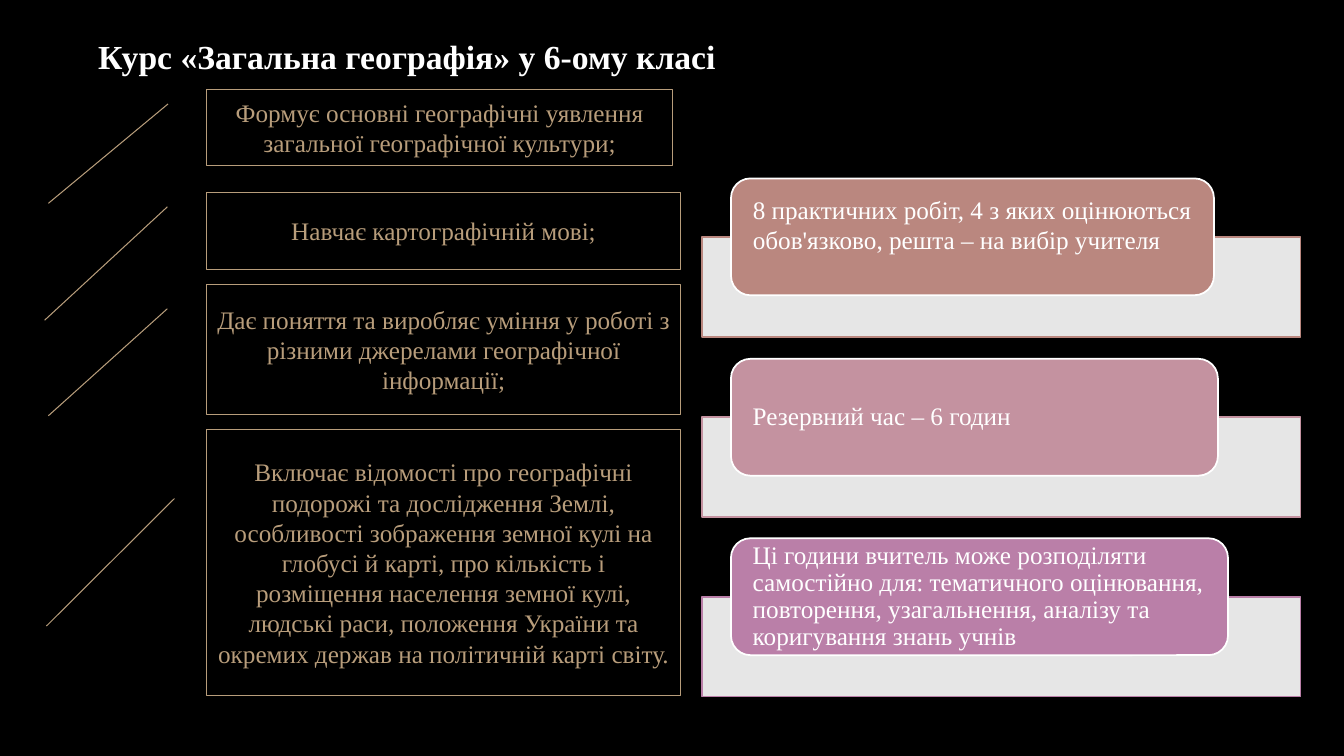
from lxml import etree
from pptx import Presentation
from pptx.dml.color import RGBColor
from pptx.enum.shapes import MSO_SHAPE
from pptx.enum.text import MSO_ANCHOR, PP_ALIGN
from pptx.oxml.ns import qn
from pptx.util import Inches, Pt

RECT = MSO_SHAPE.RECTANGLE
ROUNDED = MSO_SHAPE.ROUNDED_RECTANGLE
CALLOUT = MSO_SHAPE.LINE_CALLOUT_1
MIDDLE, TOP = MSO_ANCHOR.MIDDLE, MSO_ANCHOR.TOP
LEFT, CENTER = PP_ALIGN.LEFT, PP_ALIGN.CENTER

FONT = "Times New Roman"
BLACK, WHITE, SAND = "000000", "FFFFFF", "B89D7B"

# top, width, height, callout line (y1, x1, y2, x2 as shares of the box), text
CALLOUTS = [
    (0.89, 4.62, 0.75, (0.188, -0.083, 1.503, -0.34),
     "Формує основні географічні уявлення загальної географічної культури;"),
    (1.91, 4.7, 0.76, (0.188, -0.083, 1.668, -0.342),
     "Навчає картографічній мові;"),
    (2.82, 4.7, 1.29, (0.188, -0.083, 1.011, -0.334),
     "Дає поняття та виробляє уміння у роботі з різними джерелами "
     "географічної інформації;"),
    (4.26, 4.7, 2.64, (0.26, -0.068, 0.739, -0.338),
     "Включає відомості про географічні подорожі та дослідження Землі, "
     "особливості зображення земної кулі на глобусі й карті, про кількість і "
     "розміщення населення земної кулі, людські раси, положення України та "
     "окремих держав на політичній карті світу."),
]

# top, label width, colour, text format, text
CARDS = [
    (1.77, 4.79, "BA877F", {"insets": (0.16, 0, 0.16, 0.25)},
     "8 практичних робіт, 4 з яких оцінюються обов'язково, решта – на вибір учителя"),
    (3.56, 4.83, "C492A0", {"spacing": 0.9}, "Резервний час – 6 годин"),
    (5.34, 4.93, "BA7FA8", {"spacing": 0.9},
     "Ці години вчитель може розподіляти самостійно для: тематичного "
     "оцінювання, повторення, узагальнення, аналізу та коригування знань учнів"),
]


def rgb(color):
    return RGBColor.from_string(color)


def write(sp, text, size=18, color=WHITE, bold=False, align=LEFT, anchor=MIDDLE,
          insets=(0.1, 0.05, 0.1, 0.05), spacing=1.0):
    """Put one formatted paragraph in a shape; insets run left, top, right, bottom."""
    tf = sp.text_frame
    tf.word_wrap = True
    tf.vertical_anchor = anchor
    tf.margin_left, tf.margin_top, tf.margin_right, tf.margin_bottom = map(Inches, insets)
    p = tf.paragraphs[0]
    p.alignment = align
    p.line_spacing = spacing
    r = p.add_run()
    r.text = text
    r.font.name = FONT
    r.font.size = Pt(size)
    r.font.bold = bold
    r.font.color.rgb = rgb(color)


def add_box(s, kind, box, line, width, fill=None, opacity=100):
    sp = s.shapes.add_shape(kind, *map(Inches, box))
    sp.shadow.inherit = False
    sp.line.color.rgb = rgb(line)
    sp.line.width = Pt(width)
    if fill is None:
        sp.fill.background()
        return sp
    sp.fill.solid()
    sp.fill.fore_color.rgb = rgb(fill)
    if opacity < 100:
        clr = sp.fill._xPr.find(qn("a:solidFill"))[0]
        etree.SubElement(clr, qn("a:alpha")).set("val", str(opacity * 1000))
    return sp


def add_title(s, box):
    sp = s.shapes.add_textbox(*map(Inches, box))
    write(sp, "Курс «Загальна географія» у 6-ому класі", size=24, bold=True,
          align=CENTER, anchor=TOP)


def add_callout(s, box, pointer, text):
    sp = add_box(s, CALLOUT, box, SAND, 0.75)
    for i, share in enumerate(pointer):
        sp.adjustments[i] = share
    write(sp, text, color=SAND, align=CENTER)


def add_card(s, box, label_width, color, text_format, text):
    """Pale strip at the foot of the box with a coloured label over its top edge."""
    left, top, width, height = box
    strip = 0.99
    add_box(s, RECT, (left, top + height - strip, width, strip), color, 1.25, WHITE, 90)
    label = add_box(s, ROUNDED, (left + 0.29, top, label_width, 1.16), WHITE, 1.25, color)
    write(label, text, **{"insets": (0.16, 0, 0.16, 0), **text_format})


def main():
    prs = Presentation()
    prs.slide_width, prs.slide_height = Inches(13.33), Inches(7.5)
    s = prs.slides.add_slide(prs.slide_layouts[6])
    s.background.fill.solid()
    s.background.fill.fore_color.rgb = rgb(BLACK)

    add_title(s, (0.81, 0.31, 6.45, 0.5))
    for top, label_width, color, text_format, text in CARDS:
        add_card(s, (6.96, top, 5.94, 1.57), label_width, color, text_format, text)
    for top, width, height, pointer, text in CALLOUTS:
        add_callout(s, (2.05, top, width, height), pointer, text)

    prs.save("out.pptx")


if __name__ == "__main__":
    main()
